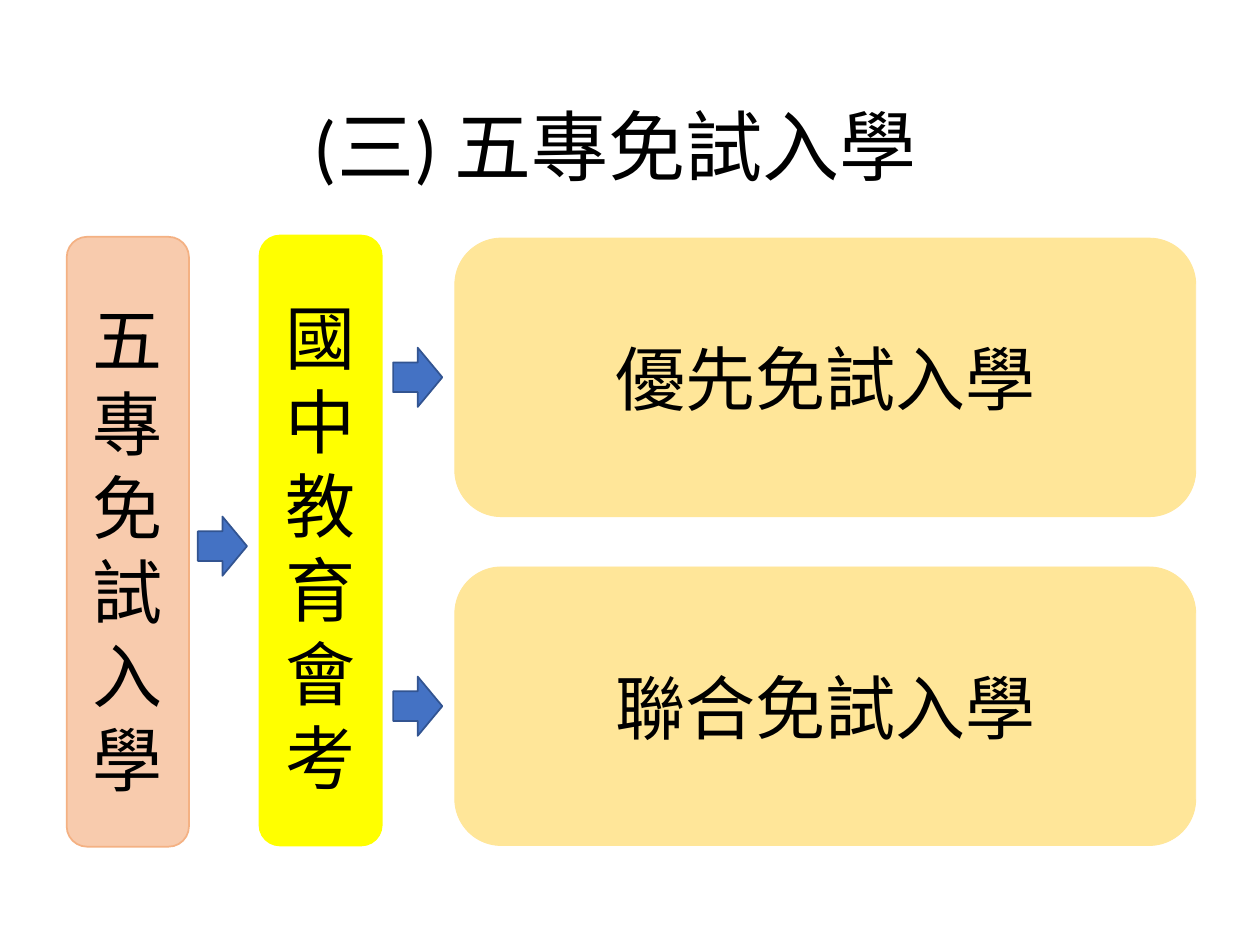
from dataclasses import dataclass

import lxml.etree
import pptx
import pptx.dml.color
import pptx.enum.shapes
import pptx.enum.text
import pptx.oxml.ns
import pptx.util

SHAPES = pptx.enum.shapes.MSO_SHAPE
COLUMNS, ROWS = 100, 75  # grid of tenths of an inch


@dataclass(frozen=True)
class Theme:
    latin_font: str = "Calibri"
    cjk_font: str = "Noto Sans CJK JP"
    title_size: int = 44
    label_size: int = 40
    column_pitch: int = 48
    text: str = "000000"
    start_fill: str = "F8CBAD"
    start_line: str = "F4B183"
    exam: str = "FFFF00"
    route: str = "FFE699"
    arrow_fill: str = "4472C4"
    arrow_line: str = "325491"


@dataclass(frozen=True)
class Area:
    column: float
    row: float
    columns: float
    rows: float


@dataclass(frozen=True)
class Box:
    text: str
    area: Area
    fill: str
    line: str
    line_width: float = 1
    stacked: bool = False  # one character to a line


THEME = Theme()
presentation = pptx.Presentation()
presentation.slide_width = pptx.util.Inches(10)
presentation.slide_height = pptx.util.Inches(7.5)
CELL_WIDTH = presentation.slide_width / COLUMNS
CELL_HEIGHT = presentation.slide_height / ROWS


def place(area: Area) -> tuple[int, int, int, int]:
    return (round(area.column * CELL_WIDTH), round(area.row * CELL_HEIGHT),
            round(area.columns * CELL_WIDTH), round(area.rows * CELL_HEIGHT))


def write_text(shape, text: str, *, size: int, font: str, spacing=None) -> None:
    frame = shape.text_frame
    frame.word_wrap = True
    frame.auto_size = pptx.enum.text.MSO_AUTO_SIZE.NONE
    frame.vertical_anchor = pptx.enum.text.MSO_ANCHOR.MIDDLE
    paragraph = frame.paragraphs[0]
    paragraph.alignment = pptx.enum.text.PP_ALIGN.CENTER
    if spacing is not None:
        paragraph.line_spacing = spacing
    run = paragraph.add_run()
    run.text = text
    run.font.size = pptx.util.Pt(size)
    run.font.name = font
    run.font.color.rgb = pptx.dml.color.RGBColor.from_string(THEME.text)
    # East Asian typeface follows the Latin one
    latin = run.font._element.find(pptx.oxml.ns.qn("a:latin"))
    east_asian = lxml.etree.Element(pptx.oxml.ns.qn("a:ea"))
    east_asian.set("typeface", THEME.cjk_font)
    latin.addnext(east_asian)


def add_preset(slide, kind, area: Area, fill: str, line: str, width: float = 1):
    shape = slide.shapes.add_shape(kind, *place(area))
    shape.shadow.inherit = False
    shape.fill.solid()
    shape.fill.fore_color.rgb = pptx.dml.color.RGBColor.from_string(fill)
    shape.line.color.rgb = pptx.dml.color.RGBColor.from_string(line)
    shape.line.width = pptx.util.Pt(width)
    return shape


def add_box(slide, box: Box) -> None:
    shape = add_preset(slide, SHAPES.ROUNDED_RECTANGLE, box.area,
                       box.fill, box.line, box.line_width)
    spacing = pptx.util.Pt(THEME.column_pitch) if box.stacked else None
    write_text(shape, box.text, size=THEME.label_size, font=THEME.cjk_font,
               spacing=spacing)
    if box.stacked:
        shape.text_frame.margin_top = pptx.util.Inches(0.15)


def add_arrow(slide, column: float, middle_row: float) -> None:
    width, height = 3.9, 4.7
    add_preset(slide, SHAPES.RIGHT_ARROW,
               Area(column, middle_row - height / 2, width, height),
               THEME.arrow_fill, THEME.arrow_line)


# Title
slide = presentation.slides.add_slide(presentation.slide_layouts[5])
title = slide.shapes.title
title.left, title.top, title.width, title.height = place(Area(17.6, 4, 62.5, 15.9))
write_text(title, "(三) 五專免試入學", size=THEME.title_size,
           font=THEME.latin_font, spacing=0.9)

# Start and examination columns
add_box(slide, Box("五專免試入學", Area(5.3, 18.8, 9.7, 48.4),
                   THEME.start_fill, THEME.start_line, stacked=True))
add_box(slide, Box("國中教育會考", Area(20.6, 18.7, 9.7, 48.4),
                   THEME.exam, THEME.exam, stacked=True))
add_arrow(slide, 15.7, 43.35)

# Admission routes, each with its arrow
ROUTE_TOP, ROUTE_HEIGHT, ROUTE_STEP = 18.9, 22.1, 26.1
for index, route in enumerate(("優先免試入學", "聯合免試入學")):
    top = ROUTE_TOP + index * ROUTE_STEP
    add_arrow(slide, 31.2, top + ROUTE_HEIGHT / 2)
    add_box(slide, Box(route, Area(36.1, top, 58.8, ROUTE_HEIGHT),
                       THEME.route, THEME.route, line_width=0.5))

presentation.save("out.pptx")
